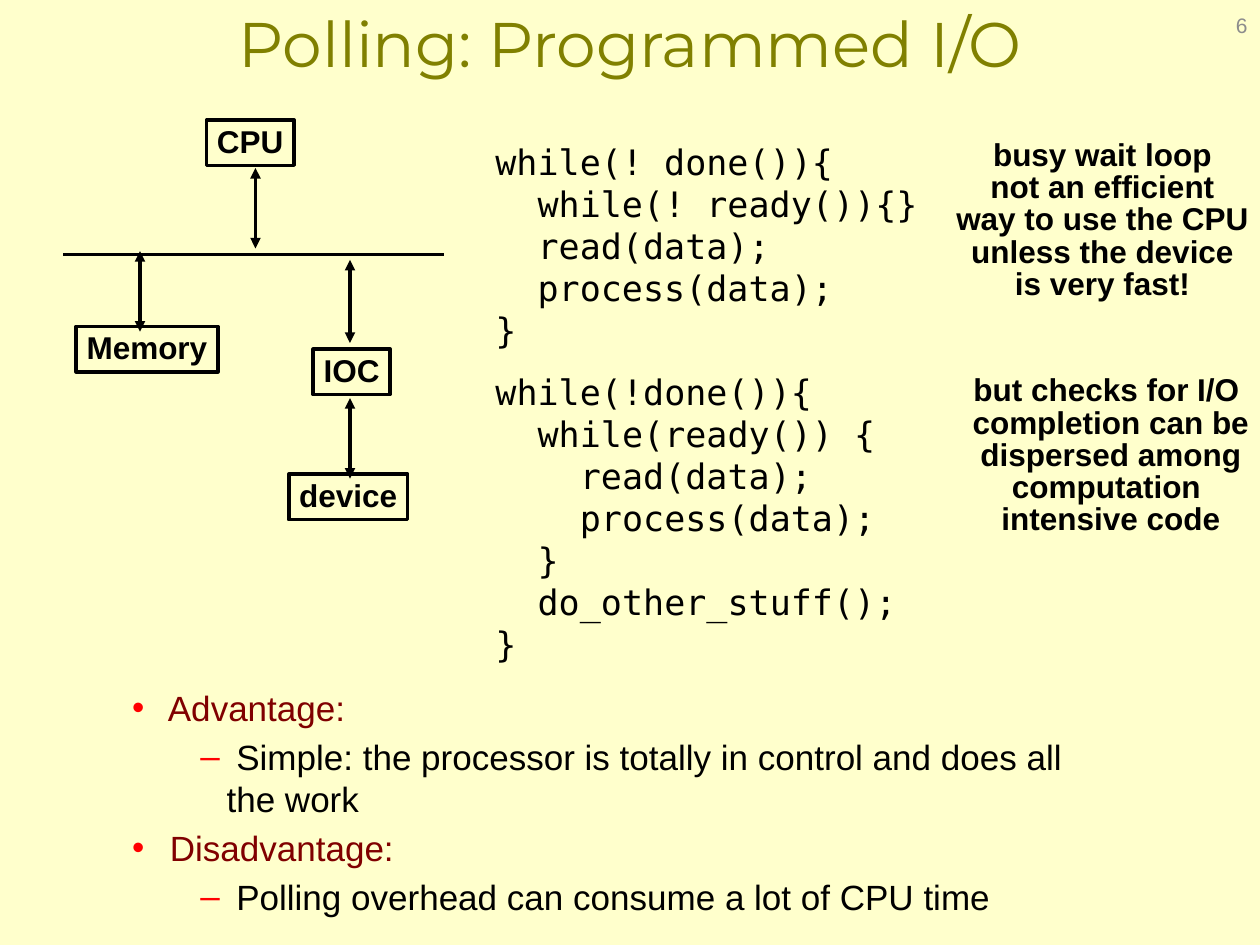
from lxml.etree import SubElement
from pptx import Presentation
from pptx.dml.color import RGBColor
from pptx.enum.shapes import MSO_CONNECTOR as CONN, MSO_SHAPE as SHAPE
from pptx.enum.text import MSO_ANCHOR as ANCHOR, MSO_AUTO_SIZE as FIT, PP_ALIGN as ALIGN
from pptx.oxml.ns import qn
from pptx.util import Pt

COLORS = {"bg": "FFFFCC", "title": "808000", "ink": "000000",
          "head": "800000", "bullet": "FF0000", "number": "8C8C8C"}
SANS, MONO, DISPLAY = "Arial", "DejaVu Sans Mono", "Montserrat"

TITLE = "Polling: Programmed I/O"
NUMBER = "6"

# Points: level, text
POINTS = [
    (0, " Advantage:"),
    (1, " Simple: the processor is totally in control and does all the work"),
    (0, " Disadvantage:"),
    (1, " Polling overhead can consume a lot of CPU time"),
]
# Per level: bullet, left margin, hanging indent, colour
LEVELS = [("•", 16, -16, "head"), ("–", 54, -15, "ink")]

# Diagram boxes: label, left, top, width
BOXES = [("CPU", 118, 68.5, 50), ("IOC", 179, 199.5, 44),
         ("device", 165, 271, 68), ("Memory", 43.5, 186.5, 81)]
BOX_H = 26
BUS = (36, 145.5, 254, 145.5)
# Two-headed arrows: x, top, bottom
ARROWS = [(146, 96, 142), (200, 148.5, 196), (200, 227.5, 273.5), (80, 143.5, 189.5)]

# Listings: left, top, width, height, code
LISTINGS = [
    (276, 77, 257, 128, """while(! done()){
  while(! ready()){}
  read(data);
  process(data);
}"""),
    (276, 208, 245, 177, """while(!done()){
  while(ready()) {
    read(data);
    process(data);
  }
  do_other_stuff();
}"""),
]

# Remarks: left, top, width, height, lines
REMARKS = [
    (541.5, 78, 177, 96, ["busy wait loop", "not an efficient", "way to use the CPU",
                          "unless the device", "is very fast!"]),
    (551, 212.5, 167.5, 96, ["but checks for I/O ", "completion can be",
                             "dispersed among", "computation ", "intensive code"]),
]


def rgb(name):
    return RGBColor.from_string(COLORS[name])


def place(sp, *box):
    sp.left, sp.top, sp.width, sp.height = map(Pt, box)


def write(sp, text, font, size, color="ink", bold=False, align=ALIGN.LEFT,
          spacing=None, anchor=ANCHOR.TOP, wrap=False, inset=(5, 2.5)):
    tf = sp.text_frame
    tf.text = text
    tf.word_wrap, tf.auto_size, tf.vertical_anchor = wrap, FIT.NONE, anchor
    tf.margin_left = tf.margin_right = Pt(inset[0])
    tf.margin_top = tf.margin_bottom = Pt(inset[1])
    for p in tf.paragraphs:
        p.alignment = align
        if spacing:
            p.line_spacing = spacing
        for r in p.runs:
            r.font.name, r.font.size, r.font.bold = font, Pt(size), bold
            r.font.color.rgb = rgb(color)
    return tf


def set_bullet(p, char, margin, indent):
    pPr = p._p.get_or_add_pPr()
    pPr.set("marL", str(Pt(margin)))
    pPr.set("indent", str(Pt(indent)))
    clr = SubElement(pPr, qn("a:buClr"))
    SubElement(clr, qn("a:srgbClr"), val=COLORS["bullet"])
    SubElement(pPr, qn("a:buFont"), typeface=SANS)
    SubElement(pPr, qn("a:buChar"), char=char)


def add_line(shapes, x1, y1, x2, y2, arrows=False):
    c = shapes.add_connector(CONN.STRAIGHT, Pt(x1), Pt(y1), Pt(x2), Pt(y2))
    c.line.color.rgb, c.line.width = rgb("ink"), Pt(2)
    if arrows:
        ln = c.line._get_or_add_ln()
        for end in ("a:headEnd", "a:tailEnd"):
            SubElement(ln, qn(end), type="triangle")
    SubElement(c._element.spPr, qn("a:effectLst"))


prs = Presentation()
prs.slide_width, prs.slide_height = Pt(720), Pt(540)
slide = prs.slides.add_slide(prs.slide_layouts[1])
slide.background.fill.solid()
slide.background.fill.fore_color.rgb = rgb("bg")
shapes = slide.shapes

# Title
place(shapes.title, 0, 0, 720, 47.5)
write(shapes.title, TITLE, DISPLAY, 36, "title", align=ALIGN.CENTER, wrap=True)

# Advantages and disadvantages
body = slide.placeholders[1]
place(body, 70.5, 389.5, 559, 138)
tf = write(body, "\n".join(text for _, text in POINTS), SANS, 20, wrap=True)
for p, (level, _) in zip(tf.paragraphs, POINTS):
    char, margin, indent, color = LEVELS[level]
    p.level, p.space_before = level, Pt(4)
    p.runs[0].font.color.rgb = rgb(color)
    set_bullet(p, char, margin, indent)

# Bus diagram
diagram = shapes.add_group_shape().shapes
for label, x, y, w in BOXES:
    sp = diagram.add_shape(SHAPE.RECTANGLE, Pt(x), Pt(y), Pt(w), Pt(BOX_H))
    sp.shadow.inherit = False
    sp.fill.background()
    sp.line.color.rgb, sp.line.width = rgb("ink"), Pt(2)
    write(sp, label, SANS, 18, bold=True, align=ALIGN.CENTER, spacing=0.92,
          anchor=ANCHOR.MIDDLE)
add_line(diagram, *BUS)
for x, top, bottom in ARROWS:
    add_line(diagram, x, top, x, bottom, arrows=True)

# Remarks beside the code
for *box, lines in REMARKS:
    write(shapes.add_textbox(*map(Pt, box)), "\n".join(lines), SANS, 18, bold=True,
          align=ALIGN.CENTER, spacing=0.85)

# Code listings
for *box, code in LISTINGS:
    write(shapes.add_textbox(*map(Pt, box)), code, MONO, 20, inset=(7.2, 3.6))

# Slide number
write(shapes.add_textbox(Pt(552), Pt(0), Pt(168), Pt(29)), NUMBER, SANS, 12, "number",
      align=ALIGN.RIGHT, anchor=ANCHOR.MIDDLE, wrap=True, inset=(7.2, 3.6))

prs.save("out.pptx")
